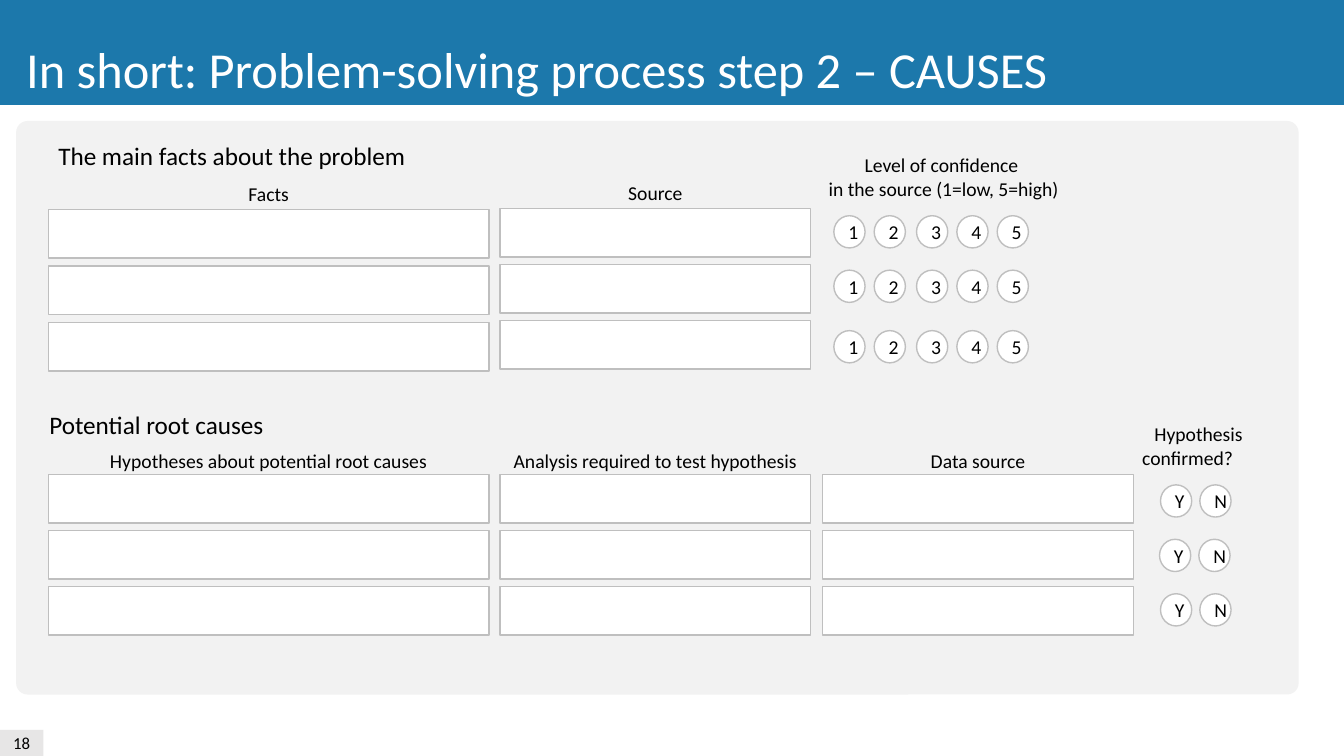
from dataclasses import dataclass

from pptx import Presentation
from pptx.dml.color import RGBColor
from pptx.enum.shapes import MSO_SHAPE
from pptx.enum.text import MSO_ANCHOR, MSO_AUTO_SIZE, PP_ALIGN
from pptx.shapes.autoshape import Shape
from pptx.slide import Slide
from pptx.util import Inches, Pt

RECT, ROUND, OVAL = MSO_SHAPE.RECTANGLE, MSO_SHAPE.ROUNDED_RECTANGLE, MSO_SHAPE.OVAL
LEFT, CENTER = PP_ALIGN.LEFT, PP_ALIGN.CENTER
TOP, MIDDLE = MSO_ANCHOR.TOP, MSO_ANCHOR.MIDDLE
GROW = MSO_AUTO_SIZE.SHAPE_TO_FIT_TEXT

FONT = "Calibri"
BLUE, PALE, GRAY = "1C78AB", "F2F2F2", "E7E6E6"
WHITE, BLACK, EDGE = "FFFFFF", "000000", "BFBFBF"
ROWS = 3


@dataclass
class Area:
    left: float
    top: float
    width: float
    height: float


@dataclass
class Label:
    text: str
    area: Area
    size: int = 14
    align: int = CENTER


@dataclass
class Column:
    head: Label
    first: float
    last: float


@dataclass
class Marks:
    text: str
    lefts: tuple[float, ...]
    top: float


FIVE = (8.27, 8.67, 9.09, 9.49, 9.89)
PAIR = (11.51, 11.9)

HEADS = [
    Label("The main facts about the problem", Area(0.48, 1.34, 7.57, 0.4), 18, LEFT),
    Label("Potential root causes", Area(0.39, 4.01, 3.69, 0.4), 18, LEFT),
    Label("Level of confidence \vin the source (1=low, 5=high)",
          Area(7.87, 1.47, 2.98, 0.57)),
]
CHECK = Label("Hypothesis confirmed?", Area(11.23, 4.14, 1.35, 0.57), align=LEFT)

COLUMNS = [
    Column(Label("Facts", Area(0.48, 1.76, 4.37, 0.34)), 2.08, 3.2),
    Column(Label("Source", Area(4.96, 1.75, 3.08, 0.34)), 2.07, 3.18),
    Column(Label("Hypotheses about potential root causes",
                 Area(0.48, 4.4, 4.37, 0.34)), 4.71, 5.82),
    Column(Label("Analysis required to test hypothesis",
                 Area(4.96, 4.4, 3.08, 0.34)), 4.71, 5.82),
    Column(Label("Data source", Area(8.16, 4.4, 3.08, 0.34)), 4.71, 5.82),
]

MARKS = [
    Marks("12345", FIVE, 2.14),
    Marks("12345", FIVE, 2.68),
    Marks("12345", FIVE, 3.28),
    Marks("YN", PAIR, 4.81),
    Marks("YN", (11.5, 11.89), 5.35),
    Marks("YN", PAIR, 5.89),
]


def color(code: str) -> RGBColor:
    return RGBColor.from_string(code)


def lengths(area: Area) -> tuple[int, ...]:
    return tuple(Inches(n) for n in (area.left, area.top, area.width, area.height))


def write(shape: Shape, text: str, size: int, align: int = CENTER,
          ink: str = BLACK, anchor: int = MIDDLE) -> None:
    frame = shape.text_frame
    frame.text = text
    frame.word_wrap = True
    frame.vertical_anchor = anchor
    for par in frame.paragraphs:
        par.alignment = align
        for run in par.runs:
            run.font.name = FONT
            run.font.size = Pt(size)
            run.font.color.rgb = color(ink)


def add_block(slide: Slide, kind: int, area: Area, fill: str, edge: str = "") -> Shape:
    shape = slide.shapes.add_shape(kind, *lengths(area))
    shape.shadow.inherit = False
    shape.fill.solid()
    shape.fill.fore_color.rgb = color(fill)
    if edge:
        shape.line.color.rgb = color(edge)
        shape.line.width = Pt(1)
    else:
        shape.line.fill.background()
    return shape


def add_label(slide: Slide, label: Label) -> Shape:
    box = slide.shapes.add_textbox(*lengths(label.area))
    write(box, label.text, label.size, label.align, anchor=TOP)
    box.text_frame.auto_size = GROW
    return box


def add_column(slide: Slide, col: Column) -> None:
    add_label(slide, col.head)
    step = (col.last - col.first) / (ROWS - 1)
    for row in range(ROWS):
        area = Area(col.head.area.left, col.first + row * step,
                    col.head.area.width, 0.48)
        add_block(slide, RECT, area, WHITE, EDGE)


def add_marks(slide: Slide, marks: Marks) -> None:
    for text, left in zip(marks.text, marks.lefts):
        mark = add_block(slide, OVAL, Area(left, marks.top, 0.31, 0.32), WHITE, EDGE)
        write(mark, text, 14)


def add_title(slide: Slide) -> None:
    band = add_block(slide, RECT, Area(0, -0.01, 13.34, 1.05), BLUE)
    title = slide.shapes.title
    title.left, title.top, title.width, title.height = lengths(
        Area(0.16, 0.33, 10.43, 0.71))
    write(title, "In short: Problem-solving process step 2 – CAUSES", 36,
          LEFT, WHITE, TOP)
    title.text_frame.word_wrap = False
    title.text_frame.auto_size = GROW
    band.element.addnext(title.element)


def main() -> None:
    deck = Presentation()
    deck.slide_width, deck.slide_height = Inches(13.33), Inches(7.5)
    slide = deck.slides.add_slide(deck.slide_layouts[5])

    add_title(slide)
    number = add_block(slide, RECT, Area(0, 7.24, 0.43, 0.26), GRAY)
    write(number, "18", 12)
    panel = add_block(slide, ROUND, Area(0.16, 1.2, 12.72, 5.69), PALE)
    panel.adjustments[0] = 0.02

    for head in HEADS:
        add_label(slide, head)
    check = add_label(slide, CHECK)
    props = check.text_frame.paragraphs[0]._p.get_or_add_pPr()
    props.set("marL", "0")
    props.set("indent", str(Inches(0.12)))

    for col in COLUMNS:
        add_column(slide, col)
    for marks in MARKS:
        add_marks(slide, marks)
    deck.save("out.pptx")


if __name__ == "__main__":
    main()
